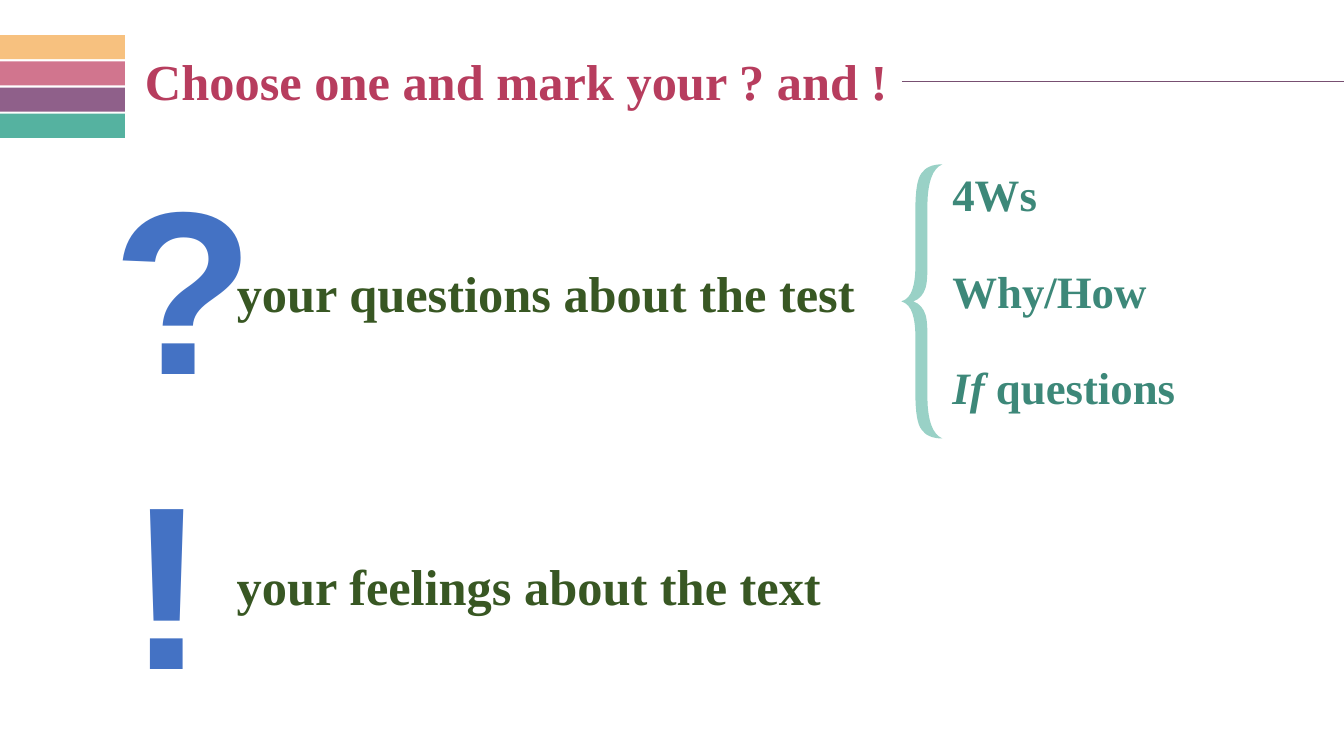
from lxml import etree
from pptx import Presentation
from pptx.dml.color import RGBColor
from pptx.enum.shapes import MSO_CONNECTOR, MSO_SHAPE
from pptx.enum.text import MSO_AUTO_SIZE, PP_ALIGN
from pptx.oxml.ns import qn
from pptx.util import Inches, Pt

RECT, STRAIGHT = MSO_SHAPE.RECTANGLE, MSO_CONNECTOR.STRAIGHT
LEFT, CENTER = PP_ALIGN.LEFT, PP_ALIGN.CENTER
FIXED, GROW = MSO_AUTO_SIZE.NONE, MSO_AUTO_SIZE.SHAPE_TO_FIT_TEXT

WIDTH, HEIGHT = Inches(13.33), Inches(7.5)
COL, ROW = WIDTH / 100, HEIGHT / 100
SERIF, SANS = "Times New Roman", "Arial"

ROSE = RGBColor(0xB7, 0x3D, 0x5E)
PLUM = RGBColor(0x77, 0x4F, 0x71)
BLUE = RGBColor(0x44, 0x72, 0xC4)
GREEN = RGBColor(0x38, 0x57, 0x23)
TEAL = RGBColor(0x3D, 0x88, 0x79)
MINT = RGBColor(0x99, 0xD1, 0xC6)
BAR_COLORS = (
    RGBColor(0xF7, 0xC1, 0x7F),
    RGBColor(0xD1, 0x75, 0x8E),
    RGBColor(0x8F, 0x60, 0x8A),
    RGBColor(0x55, 0xB2, 0xA0),
)

BRACE_W, BRACE_H = 41, 272
UPPER_BRACE = (
    (12, 136),
    (18, 134), (22, 129), (24, 123),
    (26, 117), (26, 107), (26, 95),
    (26, 77), (26, 58), (26, 40),
    (26, 28), (28, 18), (30, 13),
    (32, 7), (36, 2), (41, 0),
    (31, 0), (24, 3), (20, 9),
    (16, 14), (14, 26), (14, 44),
    (14, 63), (14, 81), (14, 100),
    (14, 110), (13, 118), (11, 124),
    (9, 130), (6, 134), (0, 136),
)


def emu(x, y, w, h):
    return round(x * COL), round(y * ROW), round(w * COL), round(h * ROW)


def add_text(s, box, paragraphs, size, font, color, align=LEFT, wrap=True,
             fit=FIXED, spacing=1.0, gap=0):
    tf = s.shapes.add_textbox(*emu(*box)).text_frame
    tf.auto_size = fit
    tf.word_wrap = wrap
    for i, runs in enumerate(paragraphs):
        p = tf.paragraphs[0] if i == 0 else tf.add_paragraph()
        p.alignment, p.line_spacing, p.space_after = align, spacing, Pt(gap)
        p.font.size, p.font.name, p.font.bold = Pt(size), font, True
        p.font.color.rgb = color
        for text, italic in runs:
            r = p.add_run()
            r.text = text
            if italic:
                r.font.italic = True


def paint(sp, color):
    sp.shadow.inherit = False
    sp.fill.solid()
    sp.fill.fore_color.rgb = color
    sp.line.fill.background()


def add_header(s, box, title):
    x, y, w, h = box
    pitch = h / len(BAR_COLORS)
    for i, color in enumerate(BAR_COLORS):
        bar = s.shapes.add_shape(RECT, *emu(x, y + i * pitch, 9.3, 3.2))
        paint(bar, color)
    add_text(s, (x + 10.05, y + 1.36, 57.09, 9.47), [[(title, False)]],
             36, SERIF, ROSE, fit=GROW)
    left, top, length, _ = emu(x + 67.1, y + 6.08, w - 67.1, 0)
    rule = s.shapes.add_connector(STRAIGHT, left, top, left + length, top)
    rule.line.color.rgb = PLUM
    rule.line.width = Pt(0.5)
    etree.SubElement(rule._element.spPr, qn("a:effectLst"))


def add_prompt(s, box, mark, mark_inset, text, text_drop):
    x, y, w, h = box
    mark_w = 9.23
    add_text(s, (x + mark_inset, y, mark_w - 2 * mark_inset, h), [[(mark, False)]],
             166, SANS, BLUE, CENTER, wrap=False, fit=GROW)
    add_text(s, (x + mark_w, y + text_drop, w - mark_w, 12.67), [[(text, False)]],
             36, SERIF, GREEN, spacing=0.9)


def add_brace(s, box):
    left, top, w, h = emu(*box)
    lower = [(px, BRACE_H - py) for px, py in reversed(UPPER_BRACE)]
    points = [*UPPER_BRACE, *lower[1:]]
    fb = s.shapes.build_freeform(*points[0], scale=(w / BRACE_W, h / BRACE_H))
    fb.add_line_segments(points[3::3], close=True)
    brace = fb.convert_to_shape(left, top)
    paint(brace, MINT)
    for i, segment in enumerate(list(brace._element.iter(qn("a:lnTo")))):
        curve = etree.Element(qn("a:cubicBezTo"))
        for px, py in points[3 * i + 1:3 * i + 4]:
            etree.SubElement(curve, qn("a:pt"), x=str(px), y=str(py))
        segment.getparent().replace(segment, curve)


def add_question_types(s, box, types):
    x, y, w, h = box
    brace_w = 3.05
    add_brace(s, (x, y, brace_w, h))
    add_text(s, (x + brace_w, y + 0.53, w - brace_w, h - 1.74), types,
             32, SERIF, TEAL, spacing=0.9, gap=34.3)


def main():
    prs = Presentation()
    prs.slide_width, prs.slide_height = WIDTH, HEIGHT
    s = prs.slides.add_slide(prs.slide_layouts[6])
    add_header(s, (0, 4.64, 100, 13.88), "Choose one and mark your ? and !")
    add_prompt(s, (7.65, 18.13, 59.42, 38.53), "?", 0, "your questions about the test", 16.85)
    add_prompt(s, (7.65, 57.2, 57.17, 38.53), "!", 1.14, "your feelings about the text", 16.53)
    add_question_types(s, (67.07, 21.73, 22.63, 36.27), [
        [("4Ws", False)],
        [("Why/How", False)],
        [("If ", True), ("questions", False)],
    ])
    prs.save("out.pptx")


if __name__ == "__main__":
    main()
